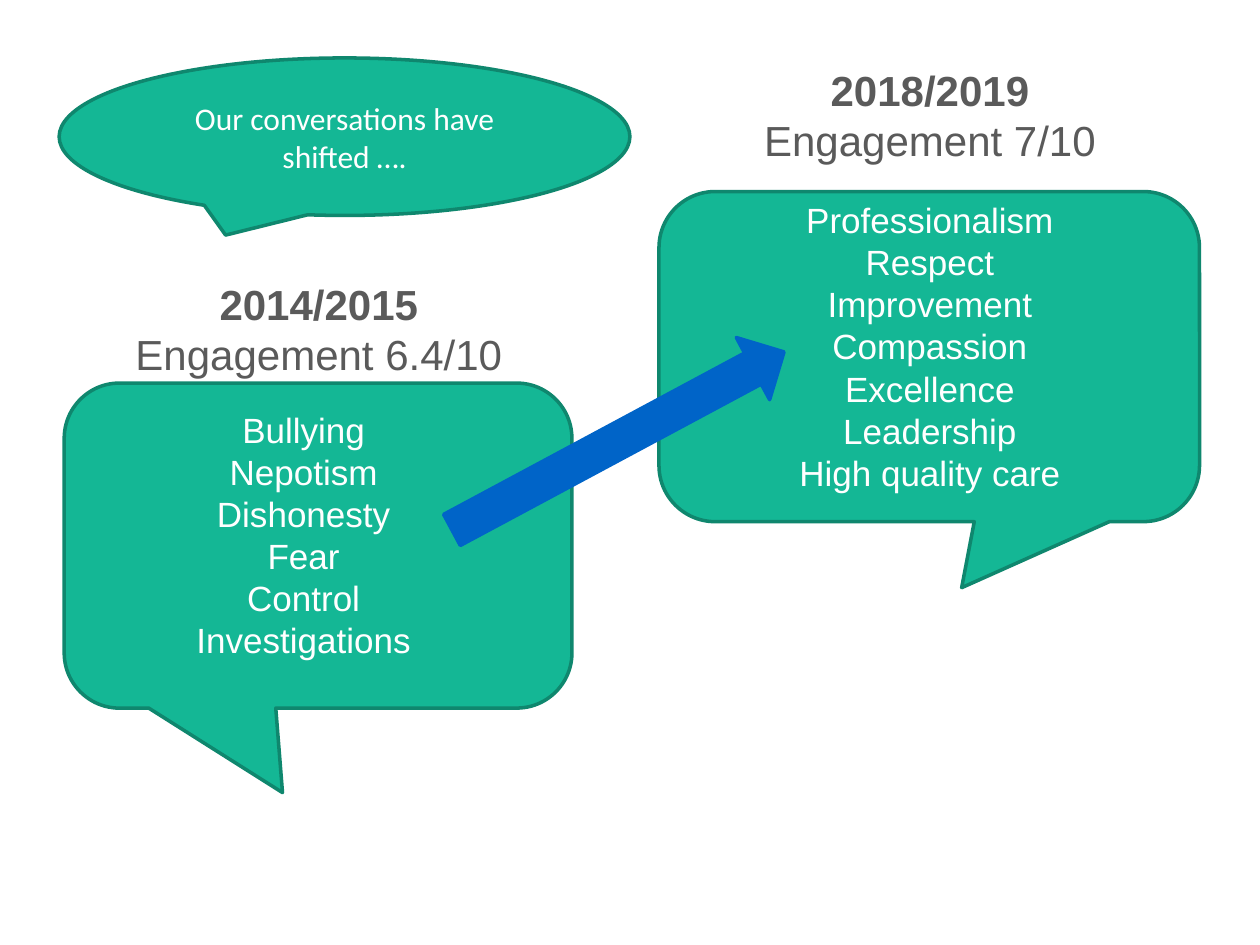
from pptx import Presentation
from pptx import util as u
from pptx.dml.color import RGBColor
from pptx.enum import shapes, text

GREEN, DARK_GREEN, BLUE = "14B795", "0F876E", "0064C8"
WHITE, GREY = "FFFFFF", "5A5A5A"
SHAPE = shapes.MSO_SHAPE


def rgb(value):
    return RGBColor.from_string(value)


def add_filled(s, kind, box, fill, line, adjustments=()):
    sp = s.shapes.add_shape(kind, *map(u.Inches, box))
    sp.shadow.inherit = False
    sp.fill.solid()
    sp.fill.fore_color.rgb = rgb(fill)
    sp.line.color.rgb = rgb(line)
    sp.line.width = u.Pt(2)
    for i, value in enumerate(adjustments):
        sp.adjustments[i] = value
    return sp


def write_lines(tf, lines, size, color, font="Arial", bold_first=False):
    tf.word_wrap = True
    for i, line in enumerate(lines):
        p = tf.paragraphs[0] if i == 0 else tf.add_paragraph()
        p.text = line
        p.alignment = text.PP_ALIGN.CENTER
        p.font.size = u.Pt(size)
        p.font.name = font
        p.font.bold = bold_first and i == 0
        p.font.color.rgb = rgb(color)


def add_text(s, box, lines, size, color, bold_first=False):
    tf = s.shapes.add_textbox(*map(u.Inches, box)).text_frame
    write_lines(tf, lines, size, color, bold_first=bold_first)


def add_period(s, bubble, tail, words_box, words, heading_box, heading):
    add_filled(s, SHAPE.ROUNDED_RECTANGULAR_CALLOUT, bubble, GREEN, DARK_GREEN, tail)
    add_text(s, words_box, words, 20, WHITE)
    add_text(s, heading_box, heading, 24, GREY, bold_first=True)


def add_arrow(s, box, rotation):
    add_filled(s, SHAPE.RIGHT_ARROW, box, BLUE, BLUE).rotation = rotation


def add_opening(s, box, line):
    sp = add_filled(s, SHAPE.OVAL_CALLOUT, box, GREEN, DARK_GREEN)
    sp.text_frame.vertical_anchor = text.MSO_ANCHOR.MIDDLE
    write_lines(sp.text_frame, [line], 18, WHITE, font="Calibri")


def main():
    prs = Presentation()
    prs.slide_width, prs.slide_height = u.Inches(10), u.Inches(7.5)
    s = prs.slides.add_slide(prs.slide_layouts[6])
    add_period(
        s, (0.51, 3.04, 4.03, 2.58), (-0.07, 0.76, 0.17),
        (0.72, 3.19, 3.38, 2.73),
        ["Bullying", "Nepotism", "Dishonesty", "Fear", "Control", "Investigations"],
        (0.84, 2.16, 3.38, 0.91), ["2014/2015", "Engagement 6.4/10"])
    add_period(
        s, (5.23, 1.52, 4.29, 2.62), (0.06, 0.7, 0.17),
        (5.69, 1.53, 3.38, 3.06),
        ["Professionalism", "Respect", "Improvement", "Compassion", "Excellence",
         "Leadership", "High quality care"],
        (5.69, 0.46, 3.38, 0.91), ["2018/2019", "Engagement 7/10"])
    add_arrow(s, (3.41, 3.22, 2.99, 0.56), 331.8)
    add_opening(s, (0.47, 0.46, 4.53, 1.25), "Our conversations have shifted ….")
    prs.save("out.pptx")


if __name__ == "__main__":
    main()
